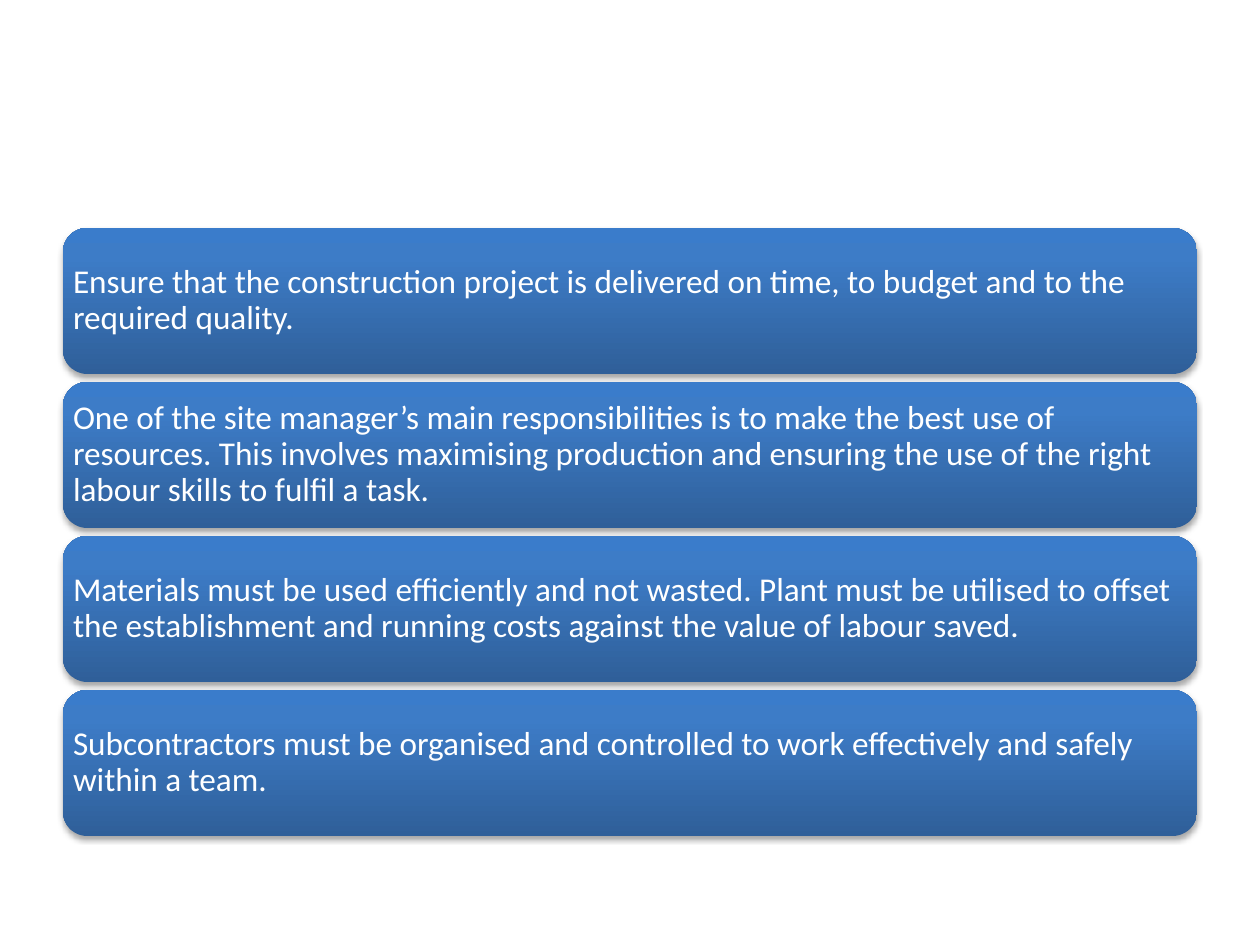
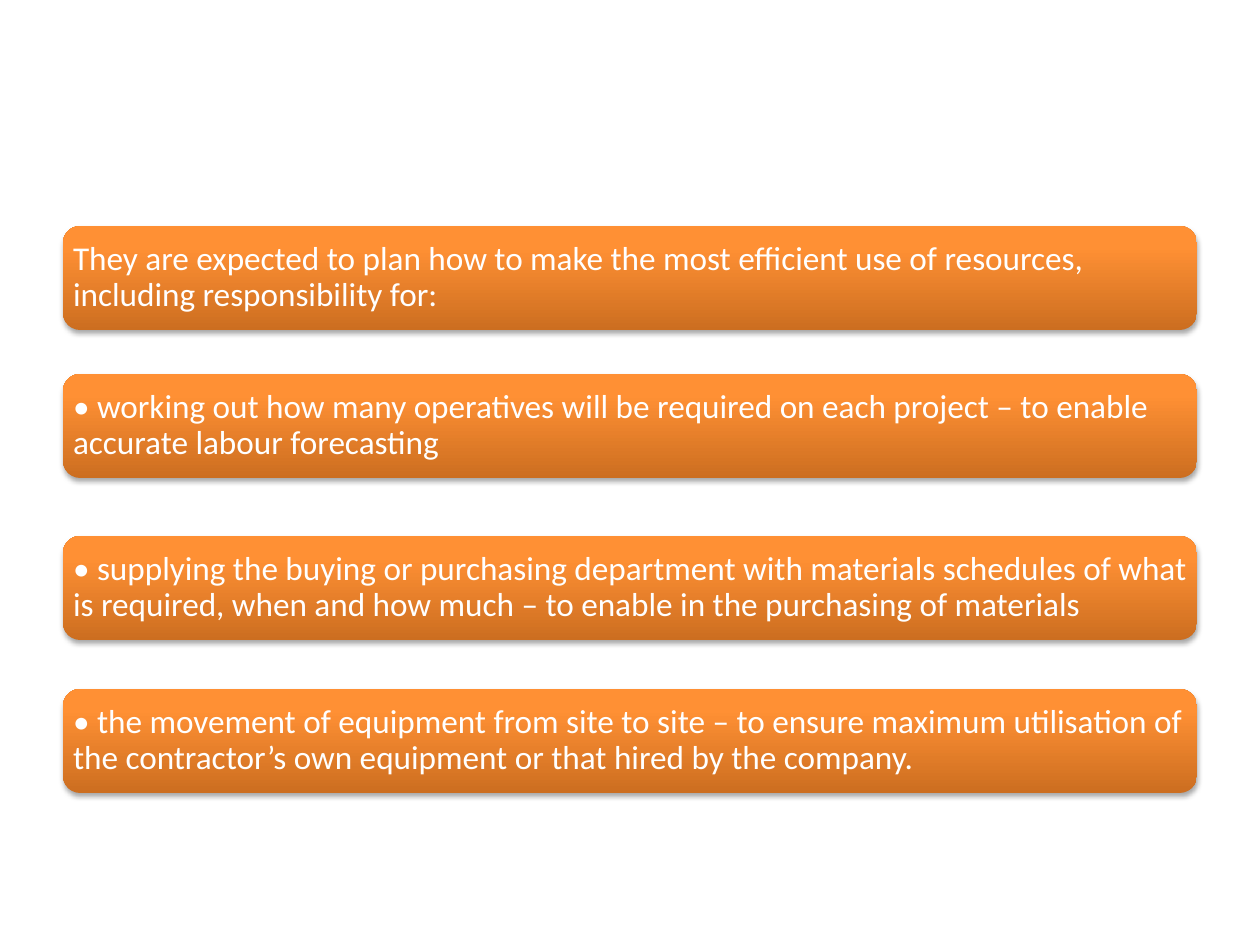
from lxml.etree import SubElement
from pptx import Presentation
from pptx.dml.color import RGBColor as RGB
from pptx.enum.shapes import MSO_SHAPE as SHAPE
from pptx.enum.text import MSO_ANCHOR as ANCHOR, PP_ALIGN as ALIGN
from pptx.oxml.ns import qn
from pptx.util import Emu, Pt

PX = 914400 / 126
COLORS = {
    "text": "FFFFFF",
    "shadow": "000000",
    "blue": ("2F5F99", "3D7CC7", "3A7CCB"),
    "orange": ("CC6E20", "FF9034", "FF9136"),
}
STOPS = (0, 80, 100)
BAR_LEFT, BAR_WIDTH, TEXT_INSET = 63, 1134, 10
FONT = {"name": "Calibri", "size": Pt(19)}
PARAGRAPH = {"alignment": ALIGN.LEFT, "line_spacing": 0.9}

SLIDES = [
    {
        "color": "blue",
        "height": 146,
        "tops": range(228, 691, 154),
        "texts": [
            "Ensure that the construction project is delivered on time, to budget and to the required quality.",
            "One of the site manager’s main responsibilities is to make the best use of resources. "
            "This involves maximising production and ensuring the use of the right labour skills to fulfil a task.",
            "Materials must be used efficiently and not wasted. Plant must be utilised to offset "
            "the establishment and running costs against the value of labour saved.",
            "Subcontractors must be organised and controlled to work effectively and safely within a team.",
        ],
    },
    {
        "color": "orange",
        "height": 104,
        "tops": (226, 374, 536, 689),
        "texts": [
            "They are expected to plan how to make the most efficient use of resources, including responsibility for:",
            "• working out how many operatives will be required on each project – to enable accurate labour forecasting",
            "• supplying the buying or purchasing department with materials schedules of what is required, "
            "when and how much – to enable in the purchasing of materials",
            "• the movement of equipment from site to site – to ensure maximum utilisation of "
            "the contractor’s own equipment or that hired by the company.",
        ],
    },
]


def px(length):
    return Emu(round(length * PX))


def shade(bar, colors):
    """Give the bar its three-stop gradient, dark at the bottom, and a soft drop shadow."""
    bar.fill.gradient()
    bar.fill.gradient_angle = 90
    stops = bar.element.spPr.find(".//" + qn("a:gsLst"))
    for old_stop in list(stops):
        stops.remove(old_stop)
    for position, color in zip(STOPS, colors):
        stop = SubElement(stops, qn("a:gs"), pos=str(position * 1000))
        SubElement(stop, qn("a:srgbClr"), val=color)

    bar.line.fill.background()
    bar.shadow.inherit = False
    effects = bar.element.spPr.find(qn("a:effectLst"))
    drop = SubElement(effects, qn("a:outerShdw"), blurRad="40000", dist="23000",
                      dir="5400000", rotWithShape="0")
    drop_color = SubElement(drop, qn("a:srgbClr"), val=COLORS["shadow"])
    SubElement(drop_color, qn("a:alpha"), val="35000")


deck = Presentation()
deck.slide_width, deck.slide_height = px(1260), px(945)

for content in SLIDES:
    slide = deck.slides.add_slide(deck.slide_layouts[6])
    height = content["height"]
    # A rounded rectangle already insets its text by 0.29 of the corner radius
    side_inset = px(round(TEXT_INSET - 0.29 * height / 6))
    frame_format = {
        "word_wrap": True,
        "vertical_anchor": ANCHOR.MIDDLE,
        "margin_left": side_inset,
        "margin_right": side_inset,
        "margin_top": side_inset,
        "margin_bottom": side_inset,
    }
    for top, text in zip(content["tops"], content["texts"]):
        bar = slide.shapes.add_shape(SHAPE.ROUNDED_RECTANGLE, px(BAR_LEFT), px(top),
                                     px(BAR_WIDTH), px(height))
        shade(bar, COLORS[content["color"]])
        frame = bar.text_frame
        frame.text = text
        paragraph = frame.paragraphs[0]
        font = paragraph.runs[0].font
        font.color.rgb = RGB.from_string(COLORS["text"])
        for target, values in ((frame, frame_format), (paragraph, PARAGRAPH), (font, FONT)):
            for attribute, value in values.items():
                setattr(target, attribute, value)

deck.save("out.pptx")
